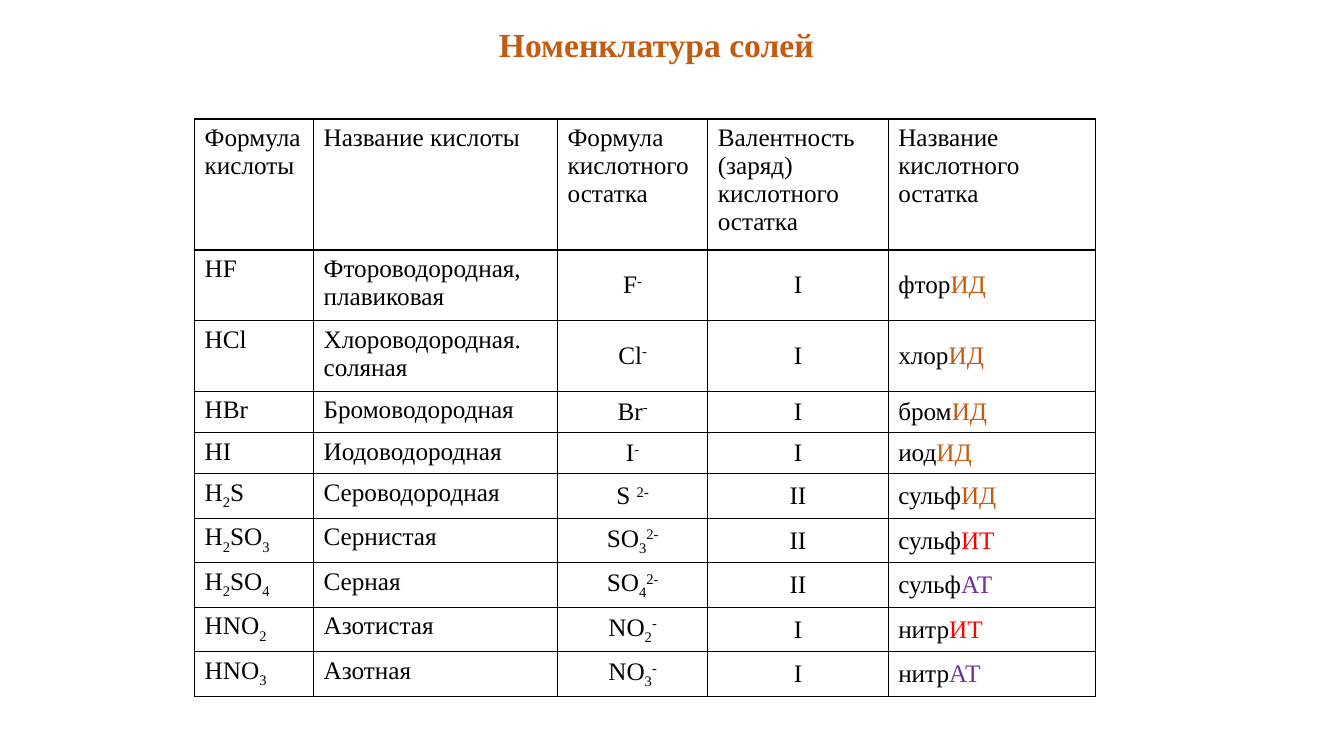
from lxml import etree
from pptx import Presentation
from pptx.dml.color import RGBColor
from pptx.enum.text import MSO_ANCHOR, PP_ALIGN
from pptx.oxml.ns import qn
from pptx.util import Inches, Pt

FONT = "Times New Roman"
BLACK = "000000"
ORANGE = "C55A11"
SUFFIX_COLORS = {"ИД": ORANGE, "ИТ": "FF0000", "АТ": "7030A0"}
BASELINES = {"_": "-25000", "^": "30000"}


def style(font, size, color):
    font.name = FONT
    font.size = Pt(size)
    font.color.rgb = RGBColor.from_string(color)


def add_borders(cell):
    properties = cell._tc.get_or_add_tcPr()
    for position, side in enumerate(("a:lnL", "a:lnR", "a:lnT", "a:lnB")):
        border = etree.Element(qn(side), w=str(Pt(1)))
        fill = etree.SubElement(border, qn("a:solidFill"))
        etree.SubElement(fill, qn("a:srgbClr"), val=BLACK)
        properties.insert(position, border)


prs = Presentation()
prs.slide_width = Inches(13.33)
prs.slide_height = Inches(7.5)
slide = prs.slides.add_slide(prs.slide_layouts[6])

title = slide.shapes.add_textbox(Inches(4.85), Inches(0.19), Inches(3.62), Inches(0.5))
title.text_frame.word_wrap = True
heading = title.text_frame.paragraphs[0]
heading.text = "Номенклатура солей"
style(heading.font, 24, ORANGE)
heading.font.bold = True

# "|" separates runs, "_" lowers a run, "^" raises it
acids = [
    ("Формула кислоты", "Название кислоты", "Формула кислотного остатка",
     "Валентность (заряд) кислотного остатка", "Название кислотного остатка"),
    ("HF", "Фтороводородная, плавиковая", "F|^-", "I", "фтор|ИД"),
    ("HCl", "Хлороводородная. соляная", "Cl|^-", "I", "хлор|ИД"),
    ("HBr", "Бромоводородная", "Br|^-", "I", "бром|ИД"),
    ("HI", "Иодоводородная", "I|^-", "I", "иод|ИД"),
    ("H|_2|S", "Сероводородная", "S |^2-", "II", "сульф|ИД"),
    ("H|_2|SO|_3", "Сернистая", "SO|_3|^2-", "II", "сульф|ИТ"),
    ("H|_2|SO|_4", "Серная", "SO|_4|^2-", "II", "сульф|АТ"),
    ("HNO|_2", "Азотистая", "NO|_2|^-", "I", "нитр|ИТ"),
    ("HNO|_3", "Азотная", "NO|_3|^-", "I", "нитр|АТ"),
]
column_widths = [1.18, 2.42, 1.49, 1.79, 2.06]
row_heights = [1.3] + [0.7] * 2 + [0.41] * 2 + [0.44] * 5

salts = slide.shapes.add_table(
    len(acids), len(column_widths), Inches(1.93), Inches(1.18),
    Inches(sum(column_widths)), Inches(sum(row_heights))).table
salts.first_row = False
salts.horz_banding = False
for column, width in zip(salts.columns, column_widths):
    column.width = Inches(width)
for row, height in zip(salts.rows, row_heights):
    row.height = Inches(height)

for row_index, acid in enumerate(acids):
    for column_index, content in enumerate(acid):
        cell = salts.cell(row_index, column_index)
        cell.fill.background()
        add_borders(cell)
        paragraph = cell.text_frame.paragraphs[0]
        style(paragraph.font, 18, BLACK)
        if row_index > 0 and column_index >= 2:
            cell.vertical_anchor = MSO_ANCHOR.MIDDLE
            if column_index < 4:
                paragraph.alignment = PP_ALIGN.CENTER
        for part in content.split("|"):
            run = paragraph.add_run()
            run.text = part.lstrip("_^")
            if part[0] in BASELINES:
                run._r.get_or_add_rPr().set("baseline", BASELINES[part[0]])
            if part in SUFFIX_COLORS:
                run.font.color.rgb = RGBColor.from_string(SUFFIX_COLORS[part])

prs.save("out.pptx")
